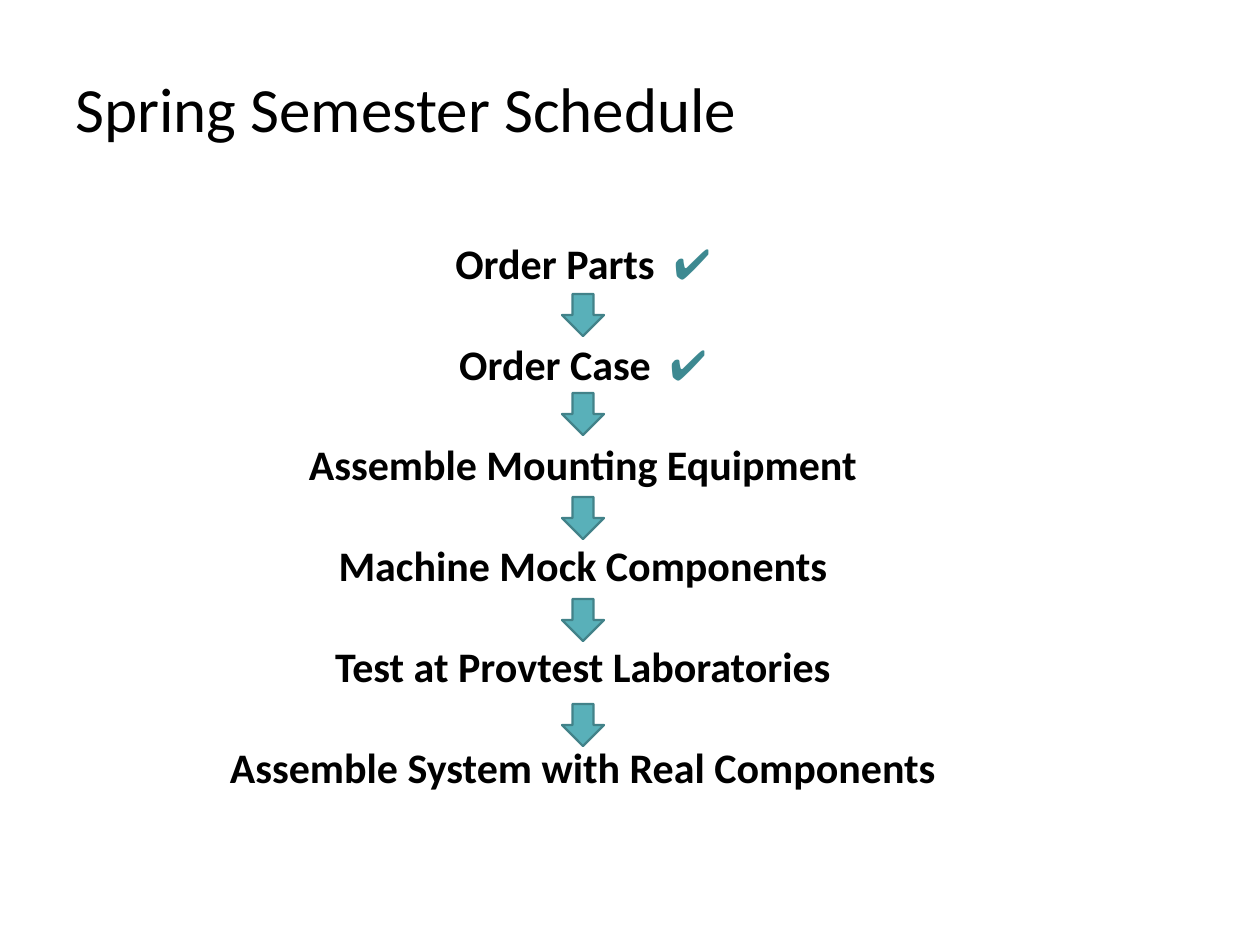
from dataclasses import dataclass

from pptx import Presentation
from pptx.dml.color import RGBColor
from pptx.enum.shapes import MSO_SHAPE
from pptx.enum.text import MSO_AUTO_SIZE, PP_ALIGN
from pptx.util import Inches, Pt


@dataclass(frozen=True)
class Theme:
    font: str = "Calibri"
    text: RGBColor = RGBColor(0x00, 0x00, 0x00)
    check: RGBColor = RGBColor(0x3D, 0x89, 0x91)
    arrow: RGBColor = RGBColor(0x59, 0xB0, 0xB9)
    outline: RGBColor = RGBColor(0x42, 0x82, 0x89)
    title_size: Pt = Pt(36)
    step_size: Pt = Pt(24)
    line_height: Pt = Pt(28.8)
    outline_width: Pt = Pt(1.25)


THEME = Theme()
STEPS = [
    ("Order Parts", True),
    ("Order Case", True),
    ("Assemble Mounting Equipment", False),
    ("Machine Mock Components", False),
    ("Test at Provtest Laboratories", False),
    ("Assemble System with Real Components", False),
]
ARROW_OFFSETS = [63, 162, 266, 368, 473]
ARROW_SIZE = 42


def px(n):
    return round(n * Inches(1) / 126)


def add_text_frame(slide, box):
    tf = slide.shapes.add_textbox(*map(px, box)).text_frame
    tf.word_wrap = True
    tf.auto_size = MSO_AUTO_SIZE.SHAPE_TO_FIT_TEXT
    return tf


def add_title(slide, box, text):
    p = add_text_frame(slide, box).paragraphs[0]
    p.text = text
    p.font.name = THEME.font
    p.font.size = THEME.title_size
    p.font.color.rgb = THEME.text


def add_run(p, text, color, bold):
    r = p.add_run()
    r.text = text
    r.font.color.rgb = color
    r.font.bold = bold


def add_arrow(slide, left, top):
    sp = slide.shapes.add_shape(
        MSO_SHAPE.DOWN_ARROW, px(left), px(top), px(ARROW_SIZE), px(ARROW_SIZE)
    )
    sp.shadow.inherit = False
    sp.fill.solid()
    sp.fill.fore_color.rgb = THEME.arrow
    sp.line.color.rgb = THEME.outline
    sp.line.width = THEME.outline_width


def add_schedule(slide, box, steps):
    left, top, width, height = box
    tf = add_text_frame(slide, box)
    for i, (label, done) in enumerate(steps):
        p = tf.add_paragraph() if i else tf.paragraphs[0]
        p.alignment = PP_ALIGN.CENTER
        p.line_spacing = THEME.line_height
        if i:
            p.space_before = THEME.line_height
        p.font.name = THEME.font
        p.font.size = THEME.step_size
        add_run(p, label + "  " if done else label, THEME.text, True)
        if done:
            add_run(p, "✔", THEME.check, False)
    for offset in ARROW_OFFSETS:
        add_arrow(slide, left + (width - ARROW_SIZE) // 2, top + offset)


def main():
    prs = Presentation()
    prs.slide_width, prs.slide_height = Inches(10), Inches(7.5)
    slide = prs.slides.add_slide(prs.slide_layouts[6])
    add_title(slide, (63, 63, 1166, 89), "Spring Semester Schedule")
    add_schedule(slide, (147, 231, 872, 572), STEPS)
    prs.save("out.pptx")


if __name__ == "__main__":
    main()
